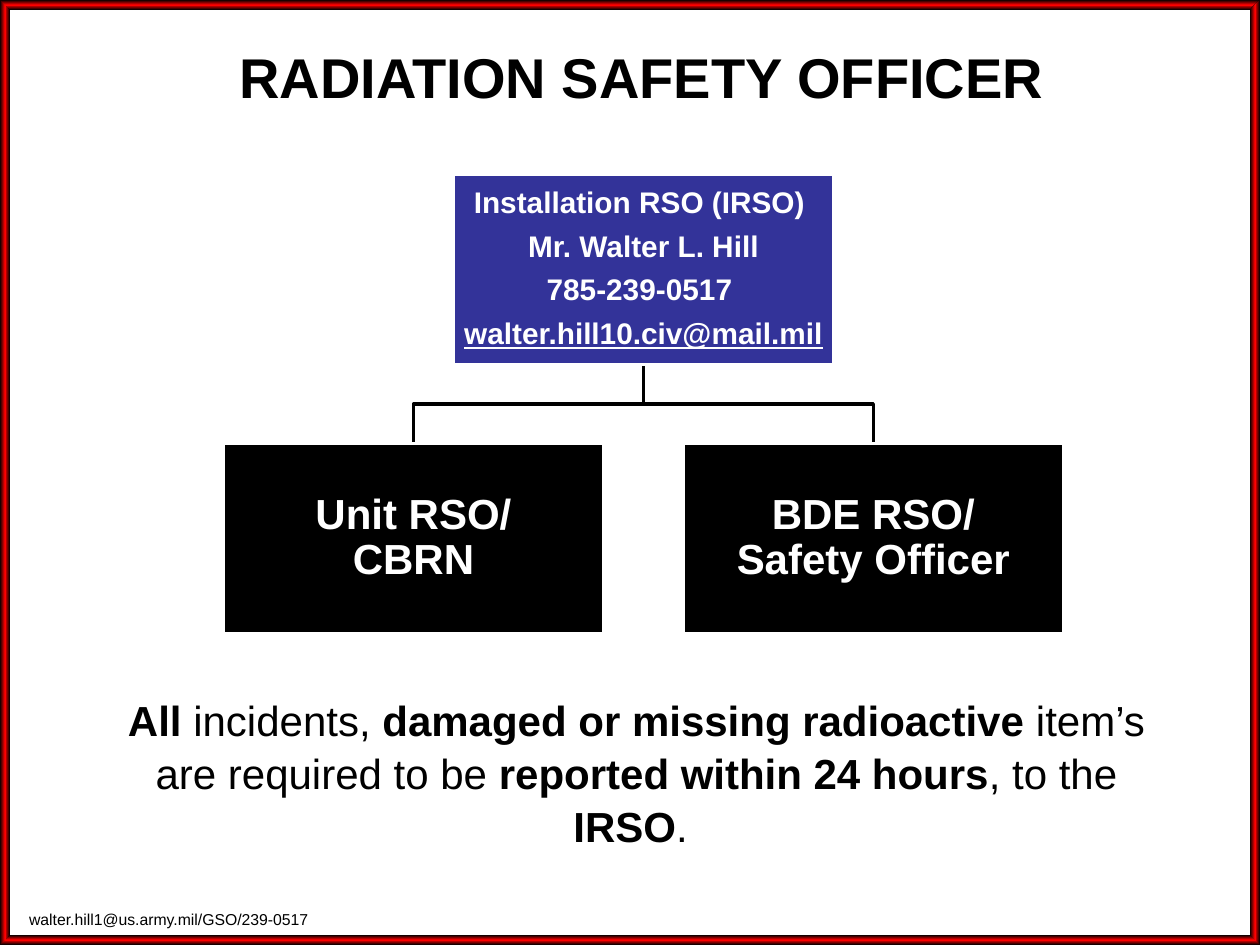
from copy import deepcopy

from lxml.etree import SubElement
from pptx import Presentation
from pptx.dml.color import RGBColor
from pptx.enum.shapes import MSO_SHAPE
from pptx.enum.text import MSO_ANCHOR, PP_ALIGN
from pptx.oxml.ns import qn
from pptx.util import Cm, Pt

COLORS = {"black": "000000", "white": "FFFFFF", "red": "FF0000", "navy": "333399"}
WIDTH, HEIGHT, FRAME = 25.4, 19.05, 0.2
BOX_WIDTH, BOX_HEIGHT = 7.67, 3.84


def rgb(name):
    return RGBColor.from_string(COLORS[name])


def write(shape, paragraphs, *, size, font="Arial", color="black", bold=False,
          underline_last=False, spacing=1.0, gap=0, inset=None,
          anchor=MSO_ANCHOR.TOP):
    """Fill a shape with centred paragraphs, each a list of (text, bold) or a string."""
    frame = shape.text_frame
    frame.word_wrap = True
    frame.vertical_anchor = anchor
    if inset is not None:
        frame.margin_left = frame.margin_right = Cm(inset)
        frame.margin_top = frame.margin_bottom = Cm(inset)
    for index, content in enumerate(paragraphs):
        paragraph = frame.add_paragraph() if index else frame.paragraphs[0]
        paragraph.alignment = PP_ALIGN.CENTER
        paragraph.line_spacing = spacing
        paragraph.space_before = Pt(gap if index else 0)
        pieces = [(content, bold)] if isinstance(content, str) else content
        for text, strong in pieces:
            for number, line in enumerate(text.split("\n")):
                if number:
                    paragraph.add_line_break()
                run = paragraph.add_run()
                run.text = line
                run.font.name = font
                run.font.size = Pt(size)
                run.font.bold = strong
                run.font.color.rgb = rgb(color)
                if underline_last and index == len(paragraphs) - 1:
                    run.font.underline = True


class SafetySlide:
    def __init__(self, presentation):
        self.slide = presentation.slides.add_slide(presentation.slide_layouts[1])
        self.shapes = self.slide.shapes

    def place(self, shape, left, top, width, height):
        shape.left, shape.top = Cm(left), Cm(top)
        shape.width, shape.height = Cm(width), Cm(height)
        return shape

    def outline(self, points, close):
        start, *rest = [(Cm(x), Cm(y)) for x, y in points]
        builder = self.shapes.build_freeform(*start)
        builder.add_line_segments(rest, close=close)
        shape = builder.convert_to_shape()
        shape.shadow.inherit = False
        return shape

    def frame_side(self, points, angle):
        side = self.outline(points, close=True)
        side.line.fill.background()
        side.fill.gradient()
        side.fill.gradient_angle = angle
        first, last = side.fill.gradient_stops
        for stop, position in ((first, 0), (last, 1)):
            stop.color.rgb = rgb("black")
            stop.position = position
        stops = side._element.spPr.find(qn("a:gradFill")).find(qn("a:gsLst"))
        stops.insert(1, deepcopy(stops[0]))
        middle = side.fill.gradient_stops[1]
        middle.position = 0.5
        middle.color.rgb = rgb("red")

    def branch(self, points):
        line = self.outline(points, close=False)
        line.fill.background()
        line.line.color.rgb = rgb("black")
        line.line.width = Pt(2)

    def box(self, left, top, fill, paragraphs, **style):
        box = self.shapes.add_shape(MSO_SHAPE.RECTANGLE, Cm(left), Cm(top),
                                    Cm(BOX_WIDTH), Cm(BOX_HEIGHT))
        box.shadow.inherit = False
        box.fill.solid()
        box.fill.fore_color.rgb = rgb(fill)
        box.line.color.rgb = rgb("white")
        box.line.width = Pt(2)
        write(box, paragraphs, color="white", bold=True, spacing=0.9, inset=0.04,
              anchor=MSO_ANCHOR.MIDDLE, **style)

    def title(self, text):
        title = self.place(self.shapes.title, 2.46, 0.74, 20.96, 1.6)
        write(title, [text], size=32, bold=True, anchor=MSO_ANCHOR.MIDDLE)

    def body(self, pieces):
        body = self.place(self.slide.placeholders[1], 1.83, 13.82, 22, 3.6)
        properties = body.text_frame.paragraphs[0]._p.get_or_add_pPr()
        properties.set("marL", "0")
        properties.set("indent", "0")
        SubElement(properties, qn("a:buNone"))
        write(body, [pieces], size=24, spacing=1.05)

    def footer(self, text):
        footer = self.shapes.add_textbox(Cm(0.3), Cm(18.21), Cm(6.2), Cm(0.64))
        write(footer, [text], size=9)


def main():
    presentation = Presentation()
    presentation.slide_width, presentation.slide_height = Cm(WIDTH), Cm(HEIGHT)
    page = SafetySlide(presentation)

    # Bevelled frame around the slide
    outer = [(0, 0), (WIDTH, 0), (WIDTH, HEIGHT), (0, HEIGHT)]
    inner = [(abs(x - FRAME), abs(y - FRAME)) for x, y in outer]
    for i in range(4):
        j = (i + 1) % 4
        page.frame_side([outer[i], outer[j], inner[j], inner[i]],
                        angle=0 if i % 2 else 90)

    page.title("RADIATION SAFETY OFFICER")

    # Organisation chart: lines first, so the boxes cover their ends
    irso_left, irso_top, officers_top = 9.14, 3.51, 8.94
    officers = {4.5: "Unit RSO/\nCBRN", 13.77: "BDE RSO/\nSafety Officer"}
    trunk = irso_left + BOX_WIDTH / 2
    irso_bottom = irso_top + BOX_HEIGHT
    fork = (irso_bottom + officers_top) / 2
    for left in officers:
        center = left + BOX_WIDTH / 2
        page.branch([(trunk, irso_bottom), (trunk, fork),
                     (center, fork), (center, officers_top)])
    page.box(irso_left, irso_top, "navy",
             ["Installation RSO (IRSO) ", "Mr. Walter L. Hill", "785-239-0517 ",
              "walter.hill10.civ@mail.mil"],
             size=17, gap=6.7, underline_last=True)
    for left, role in officers.items():
        page.box(left, officers_top, "black", [role], size=24)

    # Reporting rule and contact line
    page.body([("All ", True), ("incidents, ", False),
               ("damaged or missing radioactive ", True),
               ("item’s are required to be ", False),
               ("reported within 24 hours", True), (", to the ", False),
               ("IRSO", True), (". ", False)])
    page.footer("walter.hill1@us.army.mil/GSO/239-0517")

    presentation.save("out.pptx")


if __name__ == "__main__":
    main()
